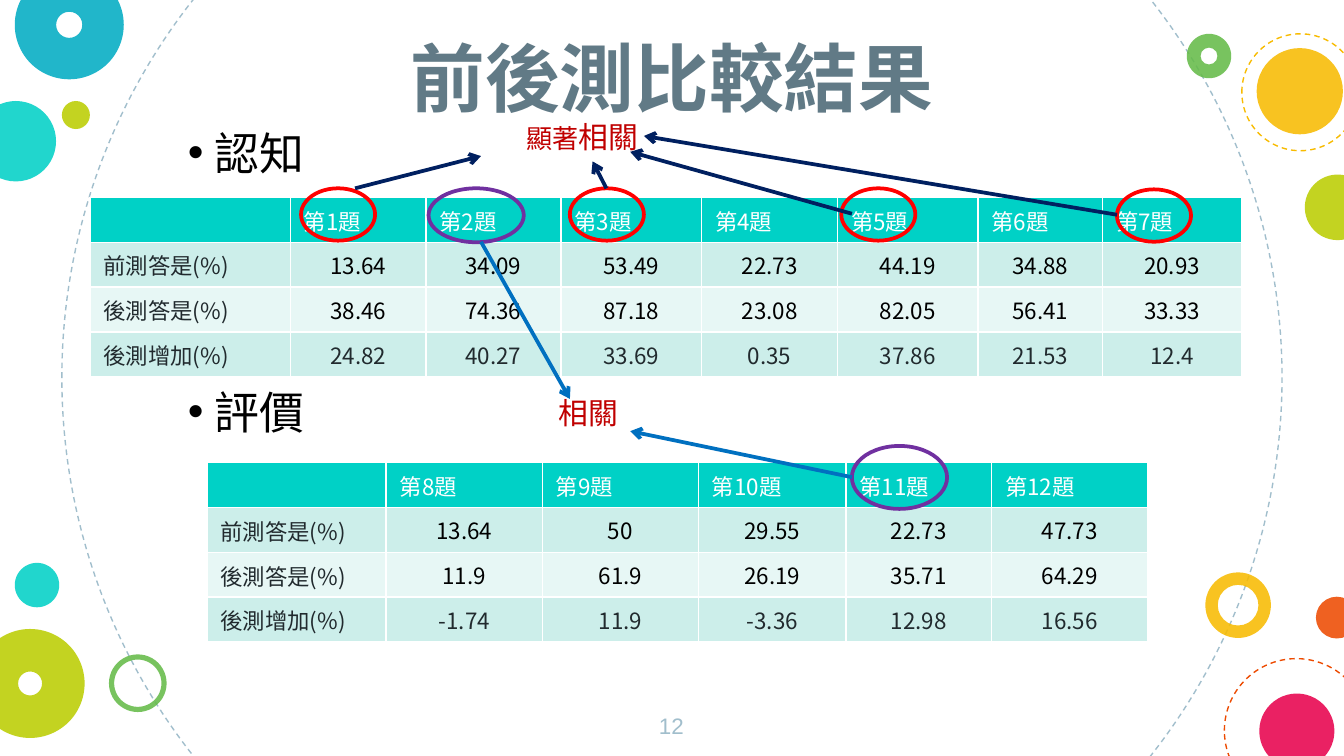
import pptx
import pptx.dml.color
import pptx.enum.shapes
import pptx.enum.text
import pptx.oxml.ns
import pptx.util
from lxml import etree
from pptx.util import Cm, Pt

SHAPE = pptx.enum.shapes.MSO_SHAPE
ANCHOR = pptx.enum.text.MSO_ANCHOR
ALIGN = pptx.enum.text.PP_ALIGN
CJK = "Noto Sans CJK SC"
RED, PURPLE, NAVY, BLUE, DARK_RED = "FF0000", "7030A0", "002060", "0070C0", "C00000"

# left, top, diameter, colour
DASHED_CIRCLES = [
    (1.17, -4.39, 23.06, "A1BECC"),
    (23.14, 12.45, 2.72, "ED4A00"),
    (23.47, 0.64, 2.21, "F8BB00"),
]
# left, top, diameter, colour, ring thickness (None for a full disc)
DOTS = [
    (-0.46, 1.91, 1.52, "00D1C6", None),
    (22.78, 10.82, 1.24, "F8BB00", 0.19),
    (0.28, -0.56, 2.06, "00ACC3", 0.38),
    (1.17, 1.91, 0.53, "BBCD00", None),
    (2.06, 12.37, 1.09, "65BB48", 0.09),
    (24.87, 11.28, 0.79, "ED4A00", None),
    (-0.46, 11.89, 2.06, "BBCD00", 0.39),
    (23.8, 13.11, 1.42, "E8004C", None),
    (22.43, 0.64, 0.84, "65BB48", 0.31),
    (23.75, 0.91, 1.63, "F8BB00", None),
    (24.66, 3.3, 1.24, "BBCD00", None),
    (0.28, 10.64, 0.84, "00D1C6", None),
]
ROW_LABELS = ["前測答是(%)", "後測答是(%)", "後測增加(%)"]
ROW_HEIGHT = 0.85
ROW_FILLS = ["00D1C6", "CCEEEA", "E7F7F5", "CCEEEA"]
TABLES = [
    {
        "at": (1.7, 3.73),
        "first_question": 1,
        "widths": [3.79, 2.56, 2.55, 2.66, 2.57, 2.65, 2.36, 2.62],
        "values": [
            ["13.64", "34.09", "53.49", "22.73", "44.19", "34.88", "20.93"],
            ["38.46", "74.36", "87.18", "23.08", "82.05", "56.41", "33.33"],
            ["24.82", "40.27", "33.69", "0.35", "37.86", "21.53", "12.4"],
        ],
    },
    {
        "at": (3.91, 8.74),
        "first_question": 8,
        "widths": [3.39, 2.95, 2.95, 2.79, 2.75, 2.96],
        "values": [
            ["13.64", "50", "29.55", "22.73", "47.73"],
            ["11.9", "61.9", "26.19", "35.71", "64.29"],
            ["-1.74", "11.9", "-3.36", "12.98", "16.56"],
        ],
    },
]
# left, top, width, height, colour
QUESTION_MARKS = [
    (5.69, 3.56, 1.4, 0.99, RED),
    (10.77, 3.56, 1.4, 0.99, RED),
    (15.9, 3.56, 1.4, 0.99, RED),
    (21.11, 3.58, 1.4, 0.99, RED),
    (8.1, 3.56, 1.8, 1.02, PURPLE),
    (16.1, 8.43, 1.8, 1.19, PURPLE),
]
# from x, from y, to x, to y, colour
ARROWS = [
    (6.71, 3.56, 9.09, 2.95, NAVY),
    (11.46, 3.56, 11.2, 3.05, NAVY),
    (16.1, 4.04, 11.91, 2.87, NAVY),
    (21.11, 4.06, 12.17, 2.57, NAVY),
    (9.09, 4.57, 10.77, 7.54, BLUE),
    (16.1, 9.02, 11.91, 8.15, BLUE),
]
# box, runs of (text, size)
FINDINGS = [
    ((9.7, 2.11, 3, 0.94), [("顯著", 14), ("相關", 16)]),
    ((10.31, 7.34, 1.85, 0.94), [("相關", 16)]),
]
SECTIONS = [("認知", 0), ("評價", 110)]  # text, space before in points


def rgb(colour):
    return pptx.dml.color.RGBColor.from_string(colour)


def add_xml(parent, tag, **attributes):
    return etree.SubElement(parent, pptx.oxml.ns.qn(tag), attributes)


def set_font(font, size, colour, name=CJK, bold=False):
    font.size, font.bold, font.name = Pt(size), bold, name
    font.color.rgb = rgb(colour)
    add_xml(font._element, "a:ea", typeface=CJK)


def add_round(slide, box, fill=None, line=None, width=2, ring=None):
    kind = SHAPE.DONUT if ring else SHAPE.OVAL
    shape = slide.shapes.add_shape(kind, *map(Cm, box))
    shape.shadow.inherit = False
    if ring:
        shape.adjustments[0] = ring
    if fill:
        shape.fill.solid()
        shape.fill.fore_color.rgb = rgb(fill)
        colour = shape._element.spPr.find(".//" + pptx.oxml.ns.qn("a:srgbClr"))
        add_xml(colour, "a:alpha", val="87000")
    else:
        shape.fill.background()
    if line:
        shape.line.color.rgb = rgb(line)
        shape.line.width = Pt(width)
    else:
        shape.line.fill.background()
    return shape


def add_text_box(slide, box):
    frame = slide.shapes.add_textbox(*map(Cm, box)).text_frame
    frame.word_wrap = True
    return frame


def add_arrow(slide, points, colour):
    arrow = slide.shapes.add_connector(
        pptx.enum.shapes.MSO_CONNECTOR.STRAIGHT, *map(Cm, points))
    arrow.line.color.rgb = rgb(colour)
    arrow.line.width = Pt(2)
    add_xml(arrow.line._get_or_add_ln(), "a:tailEnd", type="arrow")
    add_xml(arrow._element.spPr, "a:effectLst")


def format_cell(cell, text, row, column):
    properties = cell._tc.get_or_add_tcPr()
    for side in ("a:lnL", "a:lnR", "a:lnT", "a:lnB"):
        border = add_xml(properties, side, w=str(Pt(1)))
        add_xml(add_xml(border, "a:solidFill"), "a:srgbClr", val="FFFFFF")
    cell.fill.solid()
    cell.fill.fore_color.rgb = rgb(ROW_FILLS[row])
    cell.text = text
    paragraph = cell.text_frame.paragraphs[0]
    colour = "FFFFFF" if row == 0 else "212A2E"
    if row and column:
        paragraph.alignment = ALIGN.CENTER
        if row < 3:
            colour = "000000"
            cell.vertical_anchor = ANCHOR.MIDDLE
            cell.margin_left = cell.margin_right = Cm(0.05)
            cell.margin_top = cell.margin_bottom = 0
    set_font(paragraph.font, 12, colour)


def add_result_table(slide, at, first_question, widths, values):
    header = [""] + [f"第{first_question + i}題" for i in range(len(widths) - 1)]
    rows = [header] + [[label] + line for label, line in zip(ROW_LABELS, values)]
    box = (*at, sum(widths), ROW_HEIGHT * len(rows))
    table = slide.shapes.add_table(len(rows), len(widths), *map(Cm, box)).table
    for column, width in zip(table.columns, widths):
        column.width = Cm(width)
    for r, line in enumerate(rows):
        table.rows[r].height = Cm(ROW_HEIGHT)
        for c, text in enumerate(line):
            format_cell(table.cell(r, c), text, r, c)


def main():
    presentation = pptx.Presentation()
    presentation.slide_width, presentation.slide_height = Cm(25.4), Cm(14.29)
    slide = presentation.slides.add_slide(presentation.slide_layouts[5])

    for left, top, size, colour in DASHED_CIRCLES:
        circle = add_round(slide, (left, top, size, size), line=colour, width=0.75)
        circle.line.dash_style = pptx.enum.dml.MSO_LINE.DASH
    for left, top, size, colour, ring in DOTS:
        add_round(slide, (left, top, size, size), fill=colour, ring=ring)

    title = slide.shapes.title
    title.left, title.top, title.width, title.height = map(Cm, (1.9, 1.07, 21.59, 1.47))
    title.text_frame.text = "前後測比較結果"
    title.text_frame.vertical_anchor = ANCHOR.BOTTOM
    title.text_frame.margin_bottom = title.text_frame.margin_top = Cm(0.25)
    set_font(title.text_frame.paragraphs[0].font, 40, "617A86", bold=True)

    frame = add_text_box(slide, (12.04, 13.21, 1.3, 1.09))
    frame.margin_top = Cm(0.25)
    frame.text = "12"
    frame.paragraphs[0].alignment = ALIGN.CENTER
    set_font(frame.paragraphs[0].font, 12, "A1BECC", "Arial")

    frame = add_text_box(slide, (3.3, 2.25, 3.4, 6.65))
    frame.text = "\n".join(text for text, _ in SECTIONS)
    for paragraph, (_, space) in zip(frame.paragraphs, SECTIONS):
        paragraph.space_before = Pt(space)
        properties = paragraph._p.get_or_add_pPr()
        properties.set("marL", str(Cm(0.5)))
        properties.set("indent", str(-Cm(0.5)))
        add_xml(properties, "a:buFont", typeface="Arial")
        add_xml(properties, "a:buChar", char="•")
        set_font(paragraph.font, 24, "000000", "Arial")

    for table in TABLES:
        add_result_table(slide, **table)
    for *box, colour in QUESTION_MARKS:
        add_round(slide, box, line=colour)
    for box, runs in FINDINGS:
        paragraph = add_text_box(slide, box).paragraphs[0]
        for text, size in runs:
            run = paragraph.add_run()
            run.text = text
            set_font(run.font, size, DARK_RED)
    for *points, colour in ARROWS:
        add_arrow(slide, points, colour)
    presentation.save("out.pptx")


if __name__ == "__main__":
    main()
